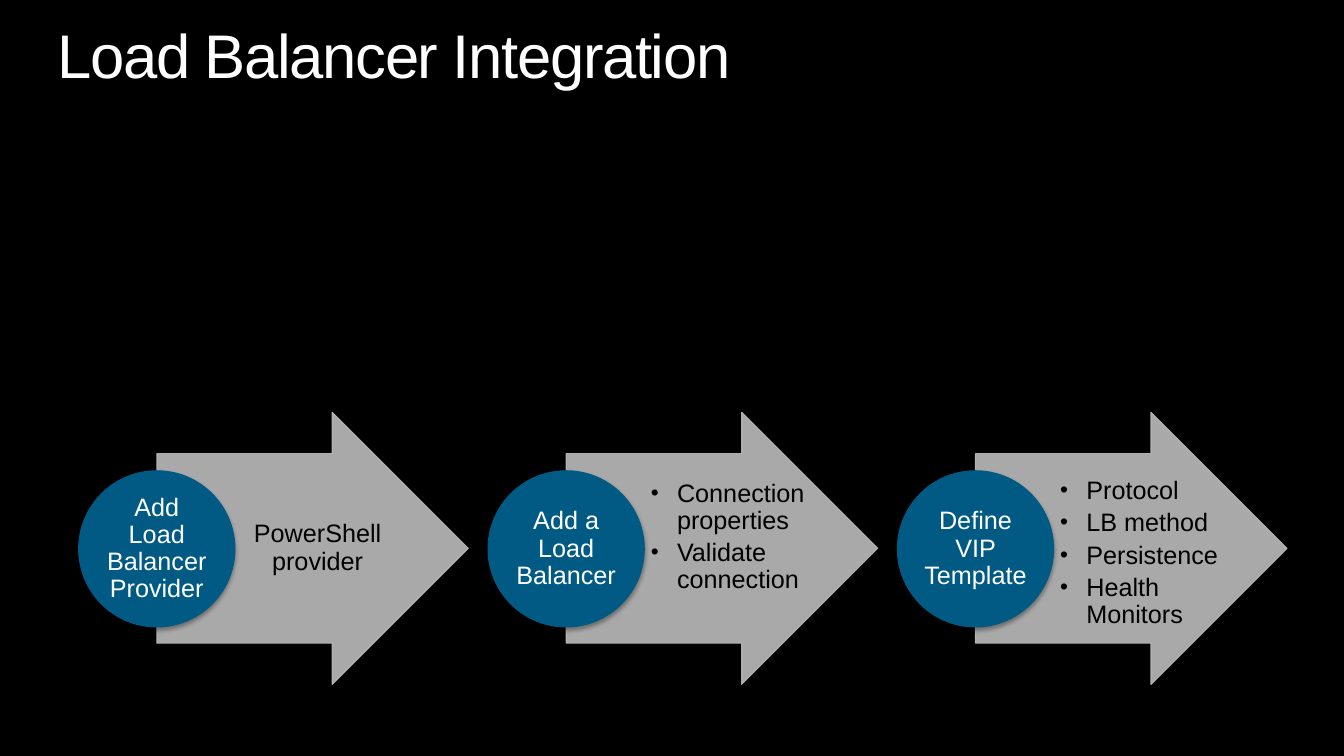
from pptx import Presentation
from pptx.dml.color import RGBColor
from pptx.enum.shapes import MSO_SHAPE
from pptx.enum.text import MSO_ANCHOR, MSO_AUTO_SIZE, PP_ALIGN
from pptx.oxml.ns import qn
from pptx.util import Inches, Pt
from lxml.etree import SubElement

COLORS = {
    "background": "000000",
    "title": "FFFFFF",
    "arrow": "BDBCBD",
    "arrow_text": "000000",
    "circle": "005A84",
    "circle_text": "FFFFFF",
    "shadow": "000000",
}

STEPS = [
    ("Add Load Balancer Provider", ["PowerShell provider"], (0.5, 0.3, 0.4, 0.3)),
    ("Add a Load Balancer", ["Connection properties", "Validate connection"], (0.6, 0.4, 0.4, 0.62)),
    ("Define VIP Template", ["Protocol", "LB method", "Persistence", "Health Monitors"], (0.6, 0.4, 0.4, 0.3)),
]

FIRST_LEFT, STEP_PITCH = 0.78, 4.06
CIRCLE_TOP, CIRCLE_SIZE = 4.67, 1.55
ARROW_TOP, ARROW_WIDTH, ARROW_HEIGHT = 4.09, 3.09, 2.7
ARROW_HEAD, ARROW_SHOULDER = 1.35, 0.41


class ProcessSlide:
    """Draw the elements of one process slide in a shared style."""

    def __init__(self, slide, font_name="Arial", text_size=18):
        """Keep the slide and its text style and paint the background."""
        self.slide = slide
        self.font_name = font_name
        self.text_size = text_size
        fill = slide.background.fill
        fill.solid()
        fill.fore_color.rgb = self.color("background")

    def color(self, name):
        """Return a named colour."""
        return RGBColor.from_string(COLORS[name])

    def format_paragraph(self, paragraph, size, color_name, alignment):
        """Apply the shared text style to a paragraph."""
        paragraph.alignment = alignment
        paragraph.line_spacing = 0.9
        for run in paragraph.runs:
            run.font.name = self.font_name
            run.font.size = Pt(size)
            run.font.color.rgb = self.color(color_name)

    def set_frame(self, text_frame, insets, anchor):
        """Set wrapping, anchor and insets of a text frame."""
        text_frame.word_wrap = True
        text_frame.auto_size = MSO_AUTO_SIZE.NONE
        text_frame.vertical_anchor = anchor
        left, top, right, bottom = (Inches(inset) for inset in insets)
        text_frame.margin_left, text_frame.margin_top = left, top
        text_frame.margin_right, text_frame.margin_bottom = right, bottom

    def paint(self, shape, color_name):
        """Give a shape a flat fill and a thin line of the same colour."""
        shape.shadow.inherit = False
        shape.fill.solid()
        shape.fill.fore_color.rgb = self.color(color_name)
        shape.line.color.rgb = self.color(color_name)
        shape.line.width = Pt(0.75)

    def add_bullet(self, paragraph):
        """Turn a paragraph into a bulleted item with a hanging indent."""
        properties = paragraph._p.get_or_add_pPr()
        properties.set("marL", str(Inches(0.5)))
        properties.set("indent", str(Inches(-0.26)))
        SubElement(properties, qn("a:buSzPct"), val="90000")
        SubElement(properties, qn("a:buFont"), typeface=self.font_name)
        SubElement(properties, qn("a:buChar"), char="•")

    def add_title(self, text):
        """Fill and place the title placeholder."""
        title = self.slide.shapes.title
        title.left, title.top = Inches(0.57), Inches(0.25)
        title.width, title.height = Inches(12.19), Inches(0.67)
        title.text_frame.text = text
        self.set_frame(title.text_frame, (0, 0, 0, 0), MSO_ANCHOR.TOP)
        paragraph = title.text_frame.paragraphs[0]
        self.format_paragraph(paragraph, 44, "title", PP_ALIGN.LEFT)
        paragraph.runs[0]._r.get_or_add_rPr().set("spc", "-100")

    def add_arrow(self, left, items, insets):
        """Add a translucent block arrow holding one line or a bulleted list."""
        neck = left + ARROW_WIDTH - ARROW_HEAD
        bottom = ARROW_TOP + ARROW_HEIGHT
        upper, lower = ARROW_TOP + ARROW_SHOULDER, bottom - ARROW_SHOULDER
        corners = [
            (left, upper), (neck, upper), (neck, ARROW_TOP),
            (left + ARROW_WIDTH, ARROW_TOP + ARROW_HEIGHT / 2),
            (neck, bottom), (neck, lower), (left, lower),
        ]
        points = [(Inches(x), Inches(y)) for x, y in corners]
        builder = self.slide.shapes.build_freeform(*points[0])
        builder.add_line_segments(points[1:], close=True)
        shape = builder.convert_to_shape()
        self.paint(shape, "arrow")
        for color in shape._element.spPr.iter(qn("a:srgbClr")):
            SubElement(color, qn("a:alpha"), val="90000")
        text_frame = shape.text_frame
        text_frame.text = "\n".join(items)
        self.set_frame(text_frame, insets, MSO_ANCHOR.MIDDLE)
        bulleted = len(items) > 1
        alignment = PP_ALIGN.LEFT if bulleted else PP_ALIGN.CENTER
        for index, paragraph in enumerate(text_frame.paragraphs):
            if bulleted:
                self.add_bullet(paragraph)
            self.format_paragraph(paragraph, self.text_size, "arrow_text", alignment)
            if index:
                paragraph.space_before = Pt(3.6)

    def add_circle(self, left, label):
        """Add a labelled circle with a soft shadow below it."""
        size = Inches(CIRCLE_SIZE)
        shape = self.slide.shapes.add_shape(
            MSO_SHAPE.OVAL, Inches(left), Inches(CIRCLE_TOP), size, size)
        self.paint(shape, "circle")
        effects = shape._element.spPr.find(qn("a:effectLst"))
        shadow = SubElement(effects, qn("a:outerShdw"), blurRad=str(Pt(3.1)),
                            dist=str(Pt(1.8)), dir="5400000", rotWithShape="0")
        color = SubElement(shadow, qn("a:srgbClr"), val=COLORS["shadow"])
        SubElement(color, qn("a:alpha"), val="35000")
        shape.text_frame.text = label
        self.set_frame(shape.text_frame, (0.03, 0.01, 0.03, 0.01), MSO_ANCHOR.MIDDLE)
        self.format_paragraph(shape.text_frame.paragraphs[0], self.text_size,
                              "circle_text", PP_ALIGN.CENTER)


def main():
    """Build and save the presentation."""
    presentation = Presentation()
    presentation.slide_width = Inches(13.33)
    presentation.slide_height = Inches(7.5)
    slide = presentation.slides.add_slide(presentation.slide_layouts[5])
    process = ProcessSlide(slide)
    process.add_title("Load Balancer Integration")
    for index, (label, items, insets) in enumerate(STEPS):
        left = FIRST_LEFT + index * STEP_PITCH
        process.add_arrow(left + CIRCLE_SIZE / 2, items, insets)
        process.add_circle(left, label)
    presentation.save("out.pptx")


if __name__ == "__main__":
    main()
